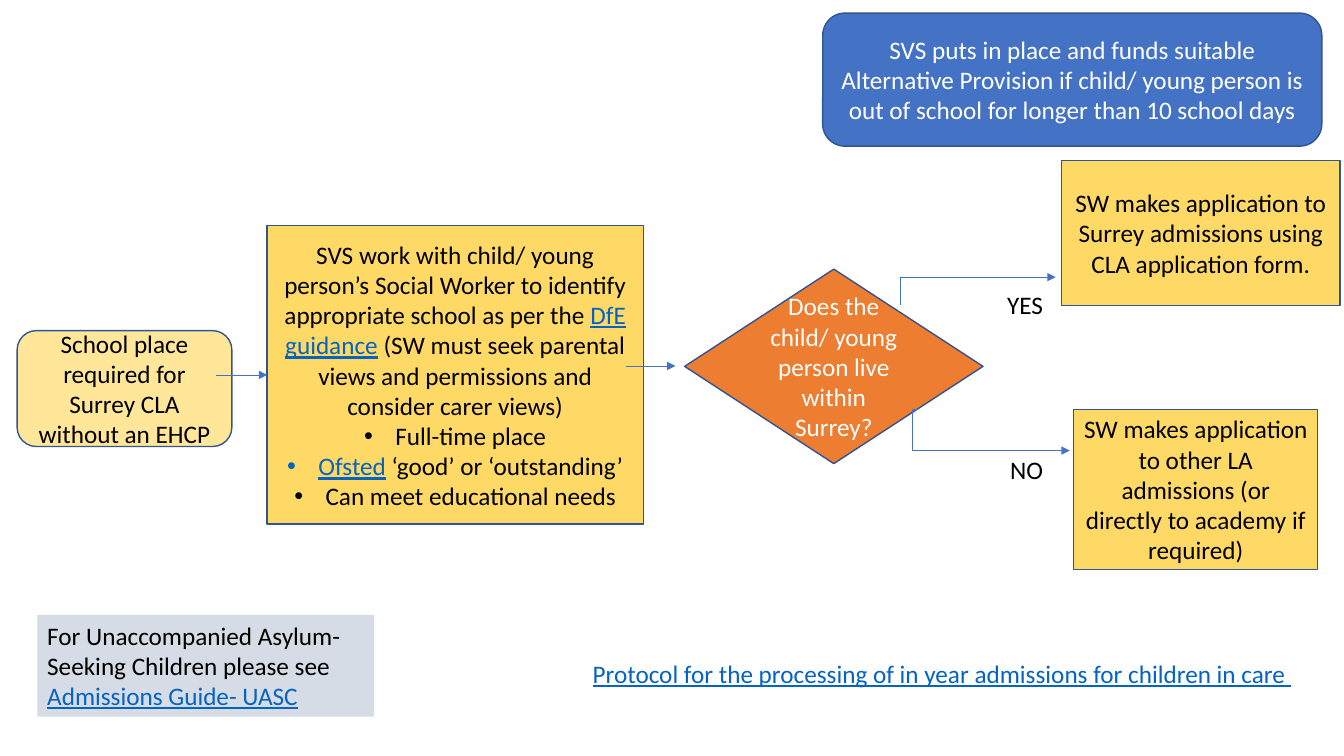
from lxml import etree
from pptx import Presentation
from pptx import util as u
from pptx.dml.color import RGBColor
from pptx.enum import shapes, text
from pptx.oxml.ns import qn

PX = 9144  # 100 px to the inch
HUES = {"pale": "FFE699", "gold": "FFD966", "orange": "ED7D31", "blue": "4472C4",
        "grey": "D6DCE5", "edge": "325491", "link": "0563C1",
        "black": "000000", "white": "FFFFFF"}
KIND = shapes.MSO_SHAPE
LINK = shapes.MSO_CONNECTOR


def hue(name):
    return RGBColor.from_string(HUES[name])


def write(shape, *lines, color="black", align="CENTER", anchor="MIDDLE"):
    """Fill a shape with lines; text between bars is styled as a link, a leading • makes a bullet."""
    frame = shape.text_frame
    frame.word_wrap = True
    frame.vertical_anchor = text.MSO_ANCHOR[anchor]
    for n, line in enumerate(lines):
        para = frame.add_paragraph() if n else frame.paragraphs[0]
        para.alignment = text.PP_ALIGN[align]
        if line.startswith("•"):
            props = para._p.get_or_add_pPr()
            props.set("marL", str(31 * PX))
            props.set("indent", str(-31 * PX))
            etree.SubElement(props, qn("a:buFont")).set("typeface", "Arial")
            etree.SubElement(props, qn("a:buChar")).set("char", "•")
        for k, part in enumerate(line.lstrip("•").split("|")):
            if not part:
                continue
            run = para.add_run()
            run.text = part
            run.font.name = "Calibri"
            run.font.size = u.Pt(18)
            run.font.color.rgb = hue("link" if k % 2 else color)
            run.font.underline = bool(k % 2)


deck = Presentation()
deck.slide_width, deck.slide_height = 1333 * PX, 750 * PX
slide = deck.slides.add_slide(deck.slide_layouts[6])

# Flow steps
steps = [
    ("start", KIND.FLOWCHART_ALTERNATE_PROCESS, (17, 328, 213, 115), "pale", "black",
     ["School place required for Surrey CLA without an EHCP"]),
    ("choice", KIND.FLOWCHART_DECISION, (679, 267, 296, 193), "orange", "white",
     ["Does the child/ young person live within Surrey?"]),
    ("search", KIND.FLOWCHART_PROCESS, (265, 224, 373, 296), "gold", "black",
     ["SVS work with child/ young person’s Social Worker to identify appropriate school "
      "as per the |DfE guidance| (SW must seek parental views and permissions and "
      "consider carer views)",
      "•Full-time place", "•|Ofsted| ‘good’ or ‘outstanding’", "•Can meet educational needs"]),
    ("inside", KIND.FLOWCHART_PROCESS, (1053, 159, 276, 144), "gold", "black",
     ["SW makes application to Surrey admissions using CLA application form."]),
    ("other", KIND.FLOWCHART_PROCESS, (1065, 406, 242, 159), "gold", "black",
     ["SW makes application to other LA admissions (or directly to academy if required)"]),
    ("funding", KIND.FLOWCHART_ALTERNATE_PROCESS, (816, 13, 495, 132), "blue", "white",
     ["SVS puts in place and funds suitable Alternative Provision if child/ young person "
      "is out of school for longer than 10 school days"]),
]
made = {}
for name, kind, box, fill, color, lines in steps:
    step = slide.shapes.add_shape(kind, *(v * PX for v in box))
    step.shadow.inherit = False
    step.fill.solid()
    step.fill.fore_color.rgb = hue(fill)
    step.line.color.rgb = hue("edge")
    step.line.width = u.Pt(1)
    write(step, *lines, color=color)
    made[name] = step

# Labels and notes
notes = [
    ((992, 446, 55, 40), None, "NO"),
    ((989, 282, 408, 40), None, "YES"),
    ((37, 610, 334, 101), "grey",
     "For Unaccompanied Asylum-Seeking Children please see |Admissions Guide- UASC"),
    ((578, 648, 732, 40), None,
     "|Protocol for the processing of in year admissions for children in care "),
]
for box, fill, line in notes:
    note = slide.shapes.add_textbox(*(v * PX for v in box))
    if fill:
        note.fill.solid()
        note.fill.fore_color.rgb = hue(fill)
    write(note, line, align="LEFT", anchor="TOP")

# Arrows: ends, position of the bend, step joined at its left side
arrows = [
    ((893, 302, 1047, 275), -100, None),
    ((911, 406, 1061, 447), -3900, None),
    ((214, 372, 265, 372), None, "search"),
    ((621, 363, 670, 363), None, None),
]
for ends, bend, goal in arrows:
    kind = LINK.ELBOW if bend else LINK.STRAIGHT
    arrow = slide.shapes.add_connector(kind, *(v * PX for v in ends))
    if goal:
        arrow.end_connect(made[goal], 1)
    arrow.line.color.rgb = hue("blue")
    arrow.line.width = u.Pt(0.5)
    props = arrow._element.spPr
    etree.SubElement(props.find(qn("a:ln")), qn("a:tailEnd")).set("type", "triangle")
    etree.SubElement(props, qn("a:effectLst"))
    if bend:
        guide = etree.SubElement(props.find(".//" + qn("a:avLst")), qn("a:gd"))
        guide.set("name", "adj1")
        guide.set("fmla", f"val {bend}")

deck.save("out.pptx")
